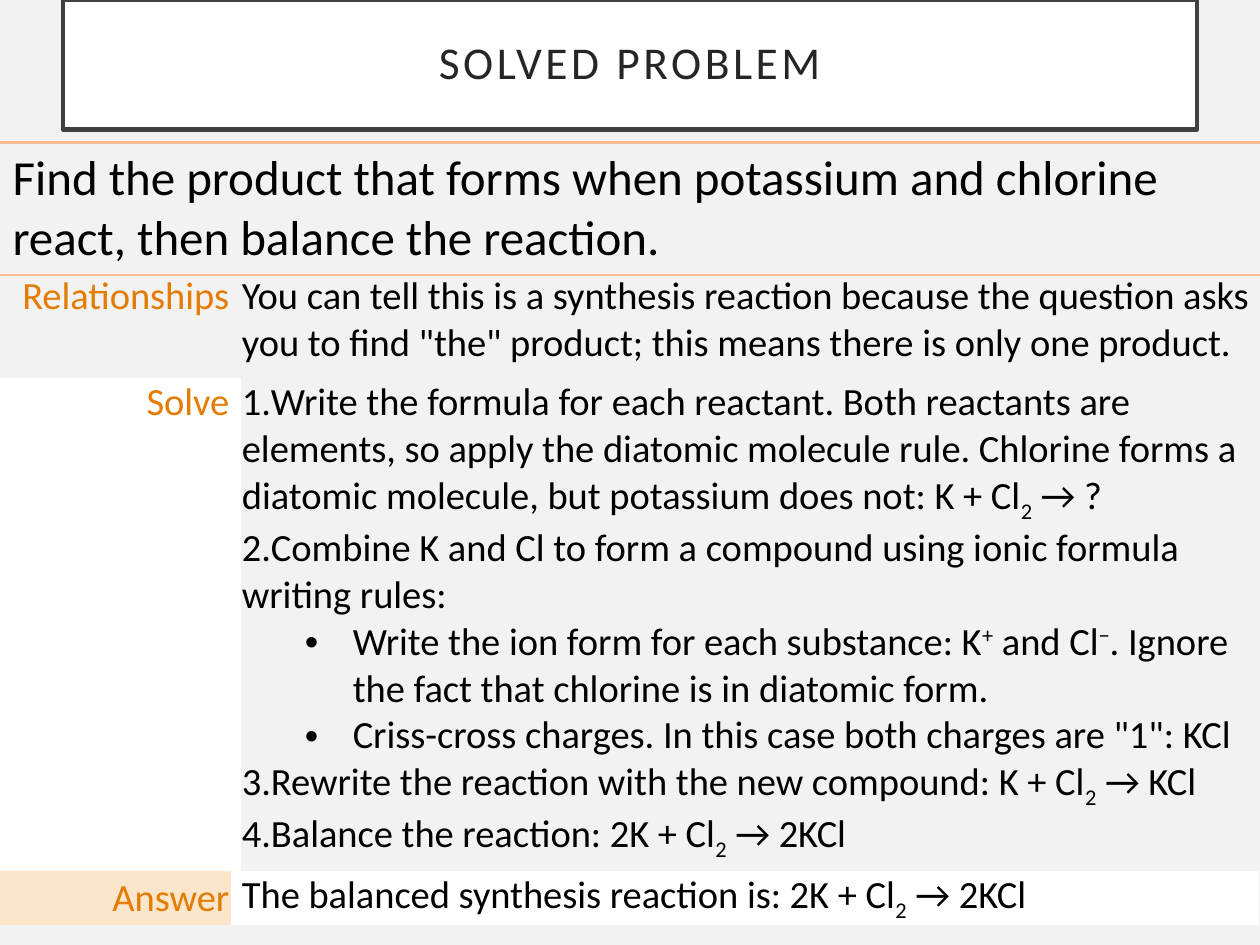
from lxml import etree
from pptx import Presentation
from pptx.dml.color import RGBColor
from pptx.enum.shapes import MSO_SHAPE
from pptx.enum.text import MSO_ANCHOR, PP_ALIGN
from pptx.oxml.ns import qn
from pptx.util import Inches, Pt

RECT = MSO_SHAPE.RECTANGLE
TOP, MIDDLE = MSO_ANCHOR.TOP, MSO_ANCHOR.MIDDLE
LEFT, CENTER, RIGHT = PP_ALIGN.LEFT, PP_ALIGN.CENTER, PP_ALIGN.RIGHT
FONT = "Calibri"
BLACK, WHITE, ORANGE, PEACH = "000000", "FFFFFF", "E37C00", "FBE6CC"
PLAIN_STYLE = "{2D5ABB26-0587-4C30-8999-92F81FD0307C}"
SHIFTS = {"_": "-25000", "^": "30000"}

QUESTION = ("Find the product that forms when potassium and chlorine react, "
            "then balance the reaction.")
REASON = ("You can tell this is a synthesis reaction because the question asks "
          'you to find "the" product; this means there is only one product.')
# "|" parts the runs; a run led by "_" is lowered, by "^" raised.
STEPS = [
    ("num", "Write the formula for each reactant. Both reactants are elements, "
            "so apply the diatomic molecule rule. Chlorine forms a diatomic "
            "molecule, but potassium does not: K + Cl|_2| → ?"),
    ("num", "Combine K and Cl to form a compound using ionic formula writing rules:"),
    ("dot", "Write the ion form for each substance: K|^+| and Cl|^−|. "
            "Ignore the fact that chlorine is in diatomic form."),
    ("dot", 'Criss-cross charges. In this case both charges are "1": KCl'),
    ("num", "Rewrite the reaction with the new compound: K + Cl|_2| → KCl"),
    ("num", "Balance the reaction: 2K + Cl|_2| → 2KCl"),
]
ANSWER = "The balanced synthesis reaction is: 2K + Cl|_2| → 2KCl"


def rgb(code):
    return RGBColor.from_string(code)


def write(para, text, size=22, color=BLACK, align=LEFT, track=0, lead=1.0):
    """Fill a paragraph from marked text."""
    para.alignment = align
    para.line_spacing = lead
    for part in text.split("|"):
        run = para.add_run()
        shift = SHIFTS.get(part[:1])
        run.text = part[1:] if shift else part
        run.font.name = FONT
        run.font.size = Pt(size)
        run.font.color.rgb = rgb(color)
        props = run.font._element
        if shift:
            props.set("baseline", shift)
        if track:
            props.set("spc", str(track * 100))


def mark(para, kind):
    """Give a paragraph a number or an indented dot."""
    props = para._p.get_or_add_pPr()
    if kind == "num":
        props.set("marL", "0")
        props.set("indent", "0")
        etree.SubElement(props, qn("a:buFont"), typeface="+mj-lt")
        etree.SubElement(props, qn("a:buAutoNum"), type="arabicPeriod")
    else:
        para.level = 1
        props.set("marL", str(Inches(0.88)))
        props.set("indent", str(Inches(-0.38)))
        etree.SubElement(props, qn("a:buFont"), typeface="Arial")
        etree.SubElement(props, qn("a:buChar"), char="•")


def pad(box, side, end):
    box.margin_left = box.margin_right = Inches(side)
    box.margin_top = box.margin_bottom = Inches(end)


def add_title(slide, text):
    shape = slide.shapes.add_shape(RECT, Inches(0.5), 0, Inches(9), Inches(1.03))
    shape.shadow.inherit = False
    shape.fill.solid()
    shape.fill.fore_color.rgb = rgb(WHITE)
    shape.line.color.rgb = rgb("404040")
    shape.line.width = Pt(2.5)
    frame = shape.text_frame
    frame.word_wrap = True
    frame.vertical_anchor = MIDDLE
    pad(frame, 0.2, 0.2)
    write(frame.paragraphs[0], text, size=26, color="262626",
          align=CENTER, track=2, lead=0.9)


def add_grid(slide, left, top, cols, rows):
    """Add a table with no style and no fills."""
    frame = slide.shapes.add_table(
        len(rows), len(cols), Inches(left), Inches(top),
        Inches(sum(cols)), Inches(sum(rows)))
    table = frame.table
    table.first_row = table.horz_banding = False
    table._tbl.tblPr.find(qn("a:tableStyleId")).text = PLAIN_STYLE
    for col, width in zip(table.columns, cols):
        col.width = Inches(width)
    for row, height in zip(table.rows, rows):
        row.height = Inches(height)
    for cell in table.iter_cells():
        cell.fill.background()
    return table


def paint(cell, color):
    cell.fill.solid()
    cell.fill.fore_color.rgb = rgb(color)


def rule(cell, color, width):
    """Draw lines above and below a cell."""
    props = cell._tc.get_or_add_tcPr()
    for spot, tag in enumerate(("a:lnT", "a:lnB")):
        line = etree.Element(qn(tag), w=str(Pt(width)))
        fill = etree.SubElement(line, qn("a:solidFill"))
        etree.SubElement(fill, qn("a:srgbClr"), val=color)
        props.insert(spot, line)


def add_question(slide):
    cell = add_grid(slide, 0, 1.13, [10], [1.03]).cell(0, 0)
    cell.vertical_anchor = MIDDLE
    pad(cell, 0.1, 0.05)
    write(cell.text_frame.paragraphs[0], QUESTION, size=28)
    rule(cell, "FEBE8F", 1.5)


def add_work(slide):
    table = add_grid(slide, -0.01, 2.16, [1.84, 0.08, 8.08], [0.84, 3.91, 0.43])
    rows = [
        ("Relationships", [(None, REASON)], TOP, (None, None, None)),
        ("Solve", STEPS, TOP, (WHITE, WHITE, None)),
        ("Answer", [(None, ANSWER)], MIDDLE, (PEACH, WHITE, WHITE)),
    ]
    for row, (label, lines, anchor, fills) in zip(table.rows, rows):
        for cell, fill in zip(row.cells, fills):
            pad(cell, 0.01, 0.01)
            cell.vertical_anchor = anchor
            if fill:
                paint(cell, fill)
        name, _, body = row.cells
        write(name.text_frame.paragraphs[0], label, color=ORANGE, align=RIGHT)
        frame = body.text_frame
        for spot, (kind, text) in enumerate(lines):
            para = frame.add_paragraph() if spot else frame.paragraphs[0]
            write(para, text)
            if kind:
                mark(para, kind)


def main():
    deck = Presentation()
    deck.slide_width, deck.slide_height = Inches(10), Inches(7.5)
    slide = deck.slides.add_slide(deck.slide_layouts[6])
    back = slide.background.fill
    back.solid()
    back.fore_color.rgb = rgb("F2F2F2")
    add_title(slide, "SOLVED PROBLEM")
    add_question(slide)
    add_work(slide)
    deck.save("out.pptx")


if __name__ == "__main__":
    main()
